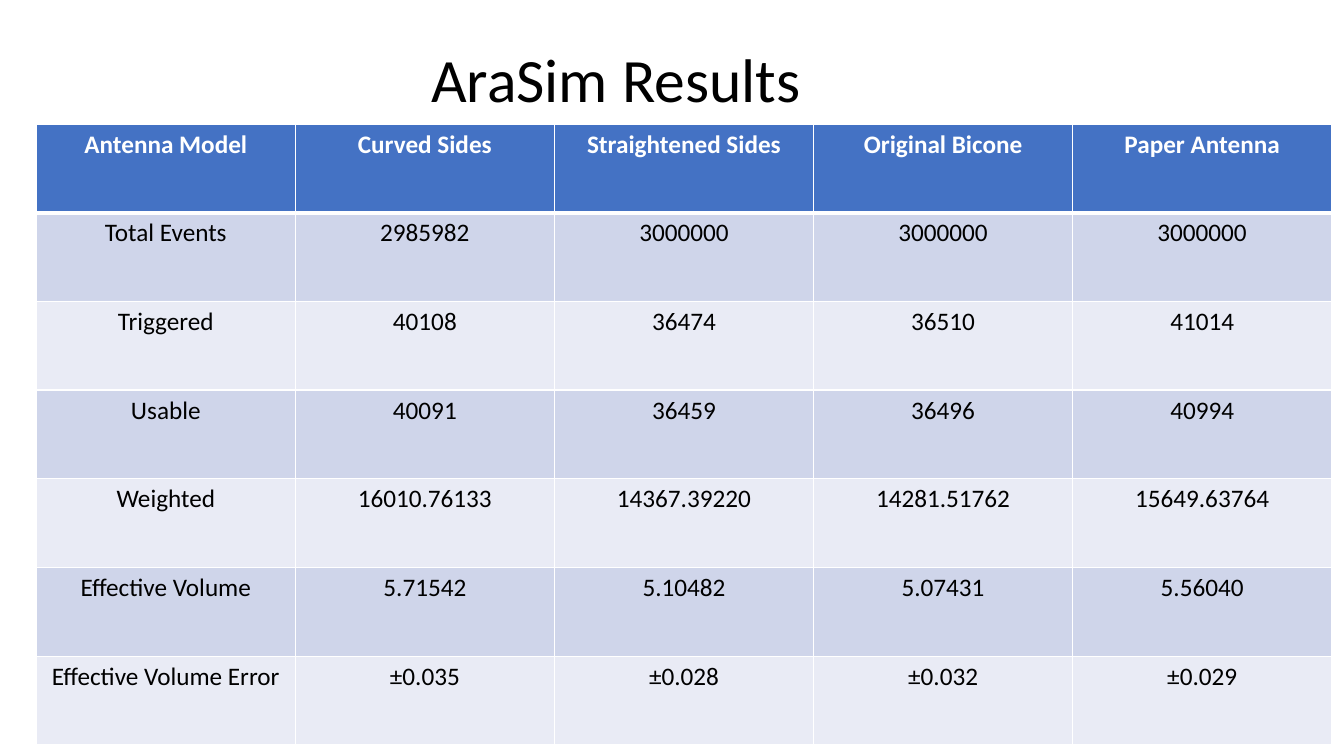
from dataclasses import dataclass

from lxml import etree
from pptx import Presentation
from pptx.dml.color import RGBColor
from pptx.enum import text
from pptx.oxml import ns
from pptx.util import Inches, Pt

COLORS = {
    "header": "4472C4",
    "odd_row": "CFD5EA",
    "even_row": "E9EBF5",
    "white": "FFFFFF",
    "black": "000000",
}
FONT = "Calibri"
LEFT, TABLE_TOP = 0.36, 1.23
COL_WIDTH, ROW_HEIGHT = 2.57, 0.88
THIN, THICK = 1, 3


@dataclass(frozen=True)
class ResultRow:
    label: str
    values: tuple[str, ...]


@dataclass(frozen=True)
class RowStyle:
    fill: str
    font: str
    bold: bool
    top: float
    bottom: float


RESULTS = [
    ResultRow("Antenna Model", ("Curved Sides", "Straightened Sides",
                                "Original Bicone", "Paper Antenna")),
    ResultRow("Total Events", ("2985982", "3000000", "3000000", "3000000")),
    ResultRow("Triggered", ("40108", "36474", "36510", "41014")),
    ResultRow("Usable", ("40091", "36459", "36496", "40994")),
    ResultRow("Weighted", ("16010.76133", "14367.39220", "14281.51762", "15649.63764")),
    ResultRow("Effective Volume", ("5.71542", "5.10482", "5.07431", "5.56040")),
    ResultRow("Effective Volume Error", ("±0.035", "±0.028", "±0.032", "±0.029")),
]


def row_style(index: int) -> RowStyle:
    if index == 0:
        return RowStyle("header", "white", True, THIN, THICK)
    band = "odd_row" if index % 2 else "even_row"
    return RowStyle(band, "black", False, THICK if index == 1 else THIN, THIN)


def write_centred(tf, content: str, size: float, color: str, bold: bool = False) -> None:
    tf.text = content
    p = tf.paragraphs[0]
    p.alignment = text.PP_ALIGN.CENTER
    font = p.runs[0].font
    font.name, font.size, font.bold = FONT, Pt(size), bold
    font.color.rgb = RGBColor.from_string(COLORS[color])


def add_border(cell, side: str, width: float) -> None:
    """Add a white line on one side (L, R, T or B) of a cell."""
    tc_pr = cell._tc.get_or_add_tcPr()
    line = etree.SubElement(tc_pr, ns.qn(f"a:ln{side}"), w=str(Pt(width)))
    fill = etree.SubElement(line, ns.qn("a:solidFill"))
    etree.SubElement(fill, ns.qn("a:srgbClr"), val=COLORS["white"])


def format_cell(cell, content: str, style: RowStyle) -> None:
    write_centred(cell.text_frame, content, 18, style.font, style.bold)
    # The schema wants the border lines ahead of the fill.
    for side, width in zip("LRTB", (THIN, THIN, style.top, style.bottom)):
        add_border(cell, side, width)
    cell.fill.solid()
    cell.fill.fore_color.rgb = RGBColor.from_string(COLORS[style.fill])


def add_title(slide, content: str) -> None:
    box = slide.shapes.add_textbox(Inches(LEFT), Inches(0.4), Inches(11.5), Inches(0.83))
    tf = box.text_frame
    tf.word_wrap = True
    tf.vertical_anchor = text.MSO_ANCHOR.MIDDLE
    write_centred(tf, content, 44, "black")
    tf.paragraphs[0].line_spacing = 0.9


def add_results_table(slide, results: list[ResultRow]) -> None:
    rows, cols = len(results), 1 + len(results[0].values)
    table = slide.shapes.add_table(
        rows, cols, Inches(LEFT), Inches(TABLE_TOP),
        Inches(cols * COL_WIDTH), Inches(rows * ROW_HEIGHT),
    ).table
    for column in table.columns:
        column.width = Inches(COL_WIDTH)
    for i, result in enumerate(results):
        table.rows[i].height = Inches(ROW_HEIGHT)
        for j, content in enumerate((result.label, *result.values)):
            format_cell(table.cell(i, j), content, row_style(i))


def main() -> None:
    prs = Presentation()
    prs.slide_width, prs.slide_height = Inches(13.33), Inches(7.5)
    slide = prs.slides.add_slide(prs.slide_layouts[6])
    add_title(slide, "AraSim Results")
    add_results_table(slide, RESULTS)
    prs.save("out.pptx")


if __name__ == "__main__":
    main()
